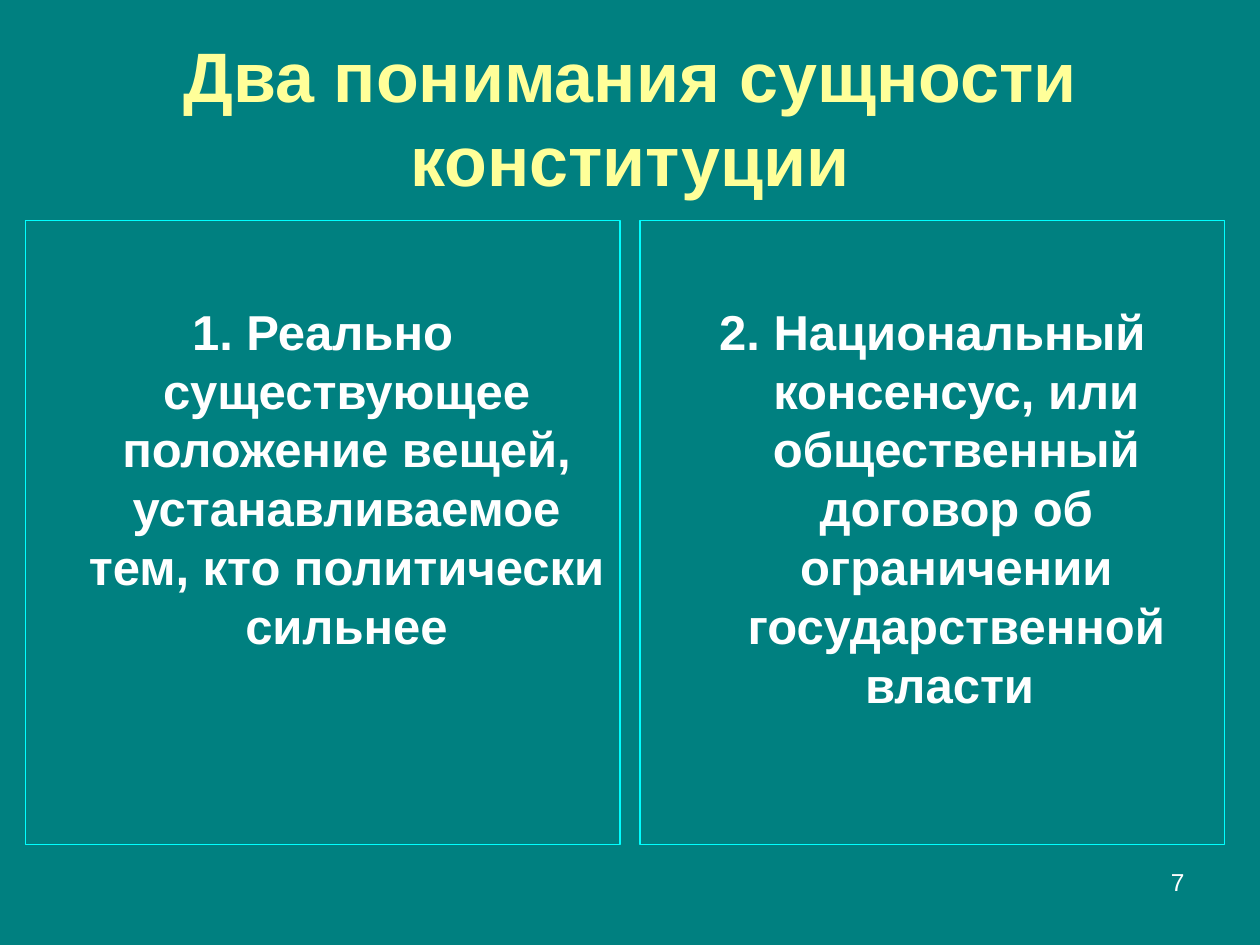
import pptx
import pptx.util
import pptx.dml.color
import pptx.enum.text
import pptx.oxml.xmlchemy
from lxml import etree

Inches = pptx.util.Inches
RGBColor = pptx.dml.color.RGBColor
Align = pptx.enum.text.PP_ALIGN
Anchor = pptx.enum.text.MSO_ANCHOR

TEAL = RGBColor(0x00, 0x80, 0x80)
YELLOW = RGBColor(0xFF, 0xFF, 0x99)
WHITE = RGBColor(0xFF, 0xFF, 0xFF)
CYAN = RGBColor(0x00, 0xFF, 0xFF)

TITLE = "Два понимания сущности конституции"
PAGE_NUMBER = "7"
VIEWS = [
    (0.2, 4.72, "1. Реально существующее положение вещей, "
                "устанавливаемое тем, кто политически сильнее"),
    (5.08, 4.64, "2. Национальный консенсус, или общественный договор "
                 "об ограничении государственной власти "),
]
PANEL_TOP, PANEL_HEIGHT = 1.75, 4.95
TEXT_INSET, HANGING = 0.64, 0.38


def place(shape, left, top, width, height):
    shape.left, shape.top = Inches(left), Inches(top)
    shape.width, shape.height = Inches(width), Inches(height)


def write(shape, text, size, color, alignment, anchor, bold=False):
    frame = shape.text_frame
    frame.text = text
    frame.word_wrap = True
    frame.auto_size = pptx.enum.text.MSO_AUTO_SIZE.NONE
    frame.vertical_anchor = anchor
    paragraph = frame.paragraphs[0]
    paragraph.alignment = alignment
    font = paragraph.runs[0].font
    font.name, font.size, font.bold = "Arial", pptx.util.Pt(size), bold
    font.color.rgb = color
    return paragraph


def hang_without_bullet(paragraph):
    properties = paragraph._p.get_or_add_pPr()
    properties.set("marL", str(Inches(HANGING)))
    properties.set("indent", str(-Inches(HANGING)))
    etree.SubElement(properties, pptx.oxml.ns.qn("a:buNone"))


def main():
    presentation = pptx.Presentation()
    presentation.slide_width, presentation.slide_height = Inches(10), Inches(7.5)
    slide = presentation.slides.add_slide(presentation.slide_layouts[3])
    slide.background.fill.solid()
    slide.background.fill.fore_color.rgb = TEAL

    title = slide.shapes.title
    place(title, 0.5, 0.3, 9, 1.25)
    write(title, TITLE, 40, YELLOW, Align.CENTER, Anchor.MIDDLE, bold=True)

    for index, (left, width, text) in enumerate(VIEWS, start=1):
        panel = slide.placeholders[index]
        place(panel, left, PANEL_TOP, width, PANEL_HEIGHT)
        panel.line.color.rgb = CYAN
        panel.line.width = pptx.util.Pt(0.75)
        paragraph = write(panel, text, 28, WHITE, Align.CENTER, Anchor.TOP, bold=True)
        paragraph.space_before = pptx.util.Pt(0)
        hang_without_bullet(paragraph)
        panel.text_frame.margin_top = Inches(TEXT_INSET)

    number = slide.shapes.add_textbox(0, 0, 0, 0)
    place(number, 7.17, 6.83, 2.33, 0.52)
    write(number, PAGE_NUMBER, 14, WHITE, Align.RIGHT, Anchor.TOP)

    presentation.save("out.pptx")


if __name__ == "__main__":
    main()
